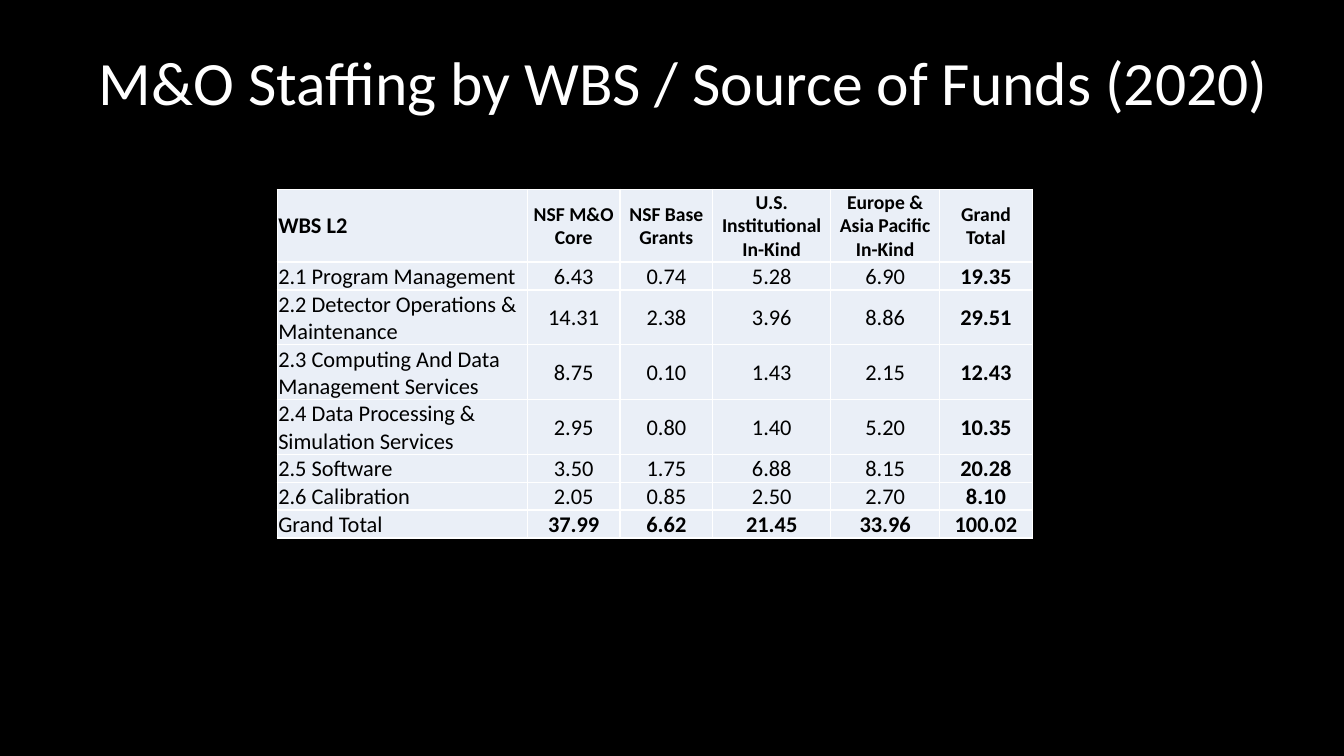
from lxml import etree
from pptx import Presentation
from pptx.dml.color import RGBColor
from pptx.enum.text import MSO_ANCHOR as ANCHOR, PP_ALIGN as ALIGN
from pptx.oxml import parse_xml
from pptx.oxml.ns import nsdecls
from pptx.util import Inches, Pt

BLACK = RGBColor(0x00, 0x00, 0x00)
WHITE = RGBColor(0xFF, 0xFF, 0xFF)
PALE_BLUE = RGBColor(0xEA, 0xEF, 0xF7)
FONT = "Calibri"

COL_WIDTHS = [2.48, 0.92, 0.92, 1.17, 1.08, 0.92]
ROW_HEIGHTS = [0.72, 0.21, 0.35, 0.35, 0.35, 0.21, 0.21, 0.22]
STAFFING = [
    ["WBS L2", "NSF M&O Core", "NSF Base Grants", "U.S. Institutional In-Kind",
     "Europe & Asia Pacific In-Kind", "Grand Total"],
    ["2.1 Program Management", "6.43", "0.74", "5.28", "6.90", "19.35"],
    ["2.2 Detector Operations & Maintenance", "14.31", "2.38", "3.96", "8.86", "29.51"],
    ["2.3 Computing And Data Management Services", "8.75", "0.10", "1.43", "2.15", "12.43"],
    ["2.4 Data Processing & Simulation Services", "2.95", "0.80", "1.40", "5.20", "10.35"],
    ["2.5 Software", "3.50", "1.75", "6.88", "8.15", "20.28"],
    ["2.6 Calibration", "2.05", "0.85", "2.50", "2.70", "8.10"],
    ["Grand Total", "37.99", "6.62", "21.45", "33.96", "100.02"],
]


def add_run(p, text, size, color, bold=False):
    r = p.add_run()
    r.text = text
    r.font.name = FONT
    r.font.size = Pt(size)
    r.font.bold = bold
    r.font.color.rgb = color


def add_borders(cell):
    tc_pr = cell._tc.get_or_add_tcPr()
    for side in ("lnL", "lnR", "lnT", "lnB"):
        tc_pr.append(parse_xml(
            f'<a:{side} {nsdecls("a")} w="{Pt(1)}"><a:solidFill>'
            f'<a:srgbClr val="{WHITE}"/></a:solidFill></a:{side}>'))


prs = Presentation()
prs.slide_width = Inches(13.33)
prs.slide_height = Inches(7.5)
s = prs.slides.add_slide(prs.slide_layouts[6])
s.background.fill.solid()
s.background.fill.fore_color.rgb = BLACK

# Title
sp = s.shapes.add_textbox(Inches(0.88), Inches(0.38), Inches(11.88), Inches(0.93))
tf = sp.text_frame
tf.word_wrap = True
tf.vertical_anchor = ANCHOR.MIDDLE
p = tf.paragraphs[0]
p.line_spacing = 0.9
add_run(p, "M&O Staffing by WBS / Source of Funds (2020)", 44, WHITE)

# Staffing table
table = s.shapes.add_table(len(ROW_HEIGHTS), len(COL_WIDTHS), Inches(2.75), Inches(1.88),
                           Inches(sum(COL_WIDTHS)), Inches(sum(ROW_HEIGHTS))).table
for column, width in zip(table.columns, COL_WIDTHS):
    column.width = Inches(width)
for row, height in zip(table.rows, ROW_HEIGHTS):
    row.height = Inches(height)

last_row, last_col = len(ROW_HEIGHTS) - 1, len(COL_WIDTHS) - 1
for i, values in enumerate(STAFFING):
    for j, value in enumerate(values):
        cell = table.cell(i, j)
        add_borders(cell)
        cell.fill.solid()
        cell.fill.fore_color.rgb = PALE_BLUE
        cell.vertical_anchor = ANCHOR.MIDDLE
        cell.margin_left = cell.margin_right = cell.margin_top = Inches(0.01)
        cell.margin_bottom = 0
        p = cell.text_frame.paragraphs[0]
        p.alignment = ALIGN.CENTER if j else ALIGN.LEFT
        # Headings and totals are bold, row labels are not
        bold = i == 0 or j == last_col or (i == last_row and j > 0)
        add_run(p, value, 14 if i == 0 and j else 16, BLACK, bold)

prs.save("out.pptx")
